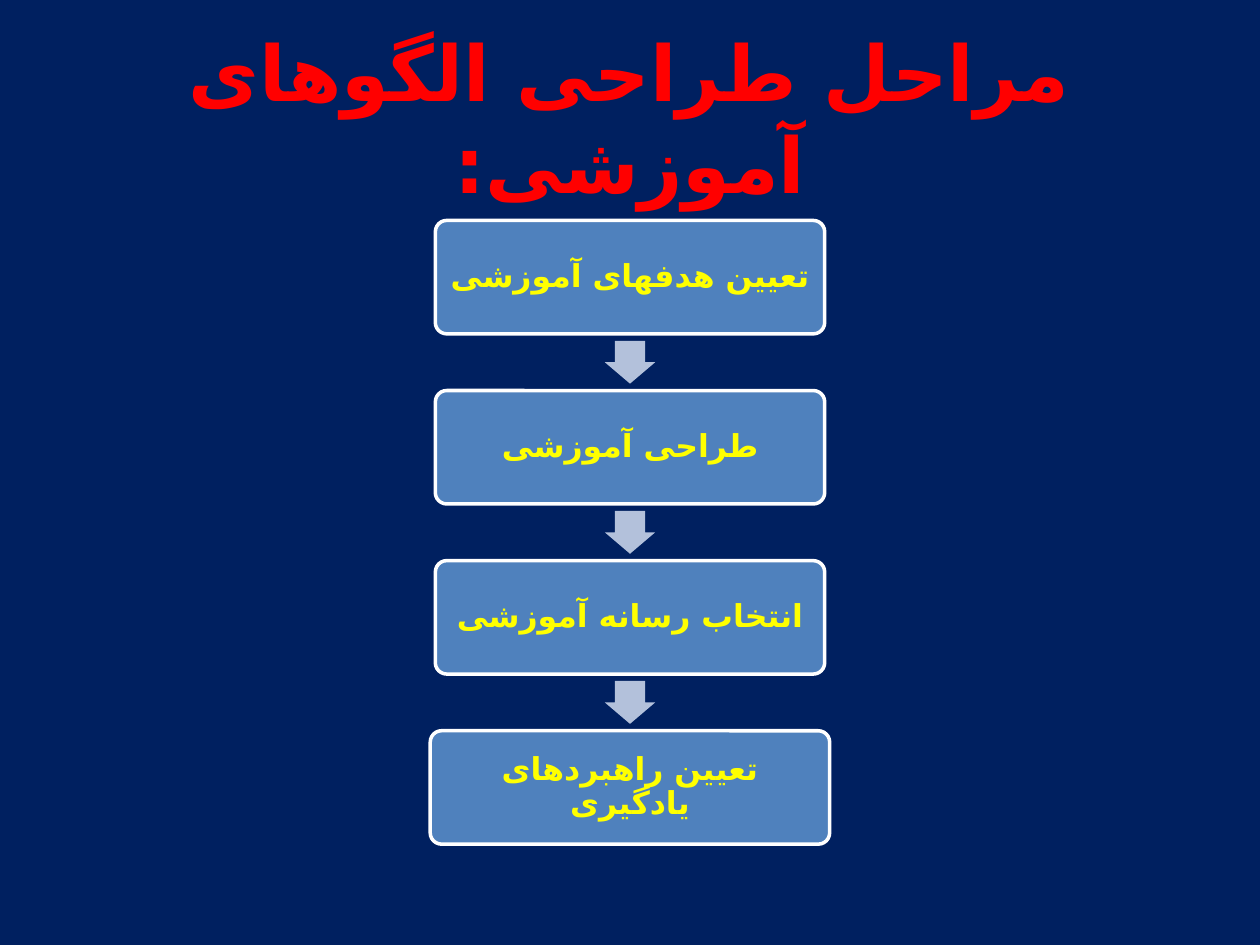
import lxml.etree
from dataclasses import dataclass

import pptx
import pptx.dml.color
import pptx.enum.shapes
import pptx.enum.text
import pptx.oxml.ns
import pptx.util

COLORS = {
    "background": "002060",
    "title": "FF0000",
    "step": "4F81BD",
    "border": "FFFFFF",
    "text": "FFFF00",
    "arrow": "B3C1DB",
}
FONT = "Calibri"
ARABIC_FONT = "DejaVu Sans"
SLIDE_W, SLIDE_H = 10, 7.5
TOP, PITCH = 1.75, 1.35
STEP_H = 0.9
ARROW_W, ARROW_H = 0.34, 0.4


@dataclass
class Step:
    text: str
    width: float = 3.09


STEPS = [
    Step("تعیین هدفهای آموزشی"),
    Step("طراحی آموزشی"),
    Step("انتخاب رسانه آموزشی"),
    Step("تعیین راهبردهای یادگیری", 3.17),
]


def rgb(name: str) -> pptx.dml.color.RGBColor:
    return pptx.dml.color.RGBColor.from_string(COLORS[name])


def centered(width: float, middle: float, height: float) -> list[pptx.util.Length]:
    box = ((SLIDE_W - width) / 2, middle - height / 2, width, height)
    return [pptx.util.Inches(v) for v in box]


def write(sp, text: str, size: float, color: str):
    tf = sp.text_frame
    tf.word_wrap = True
    tf.vertical_anchor = pptx.enum.text.MSO_ANCHOR.MIDDLE
    p = tf.paragraphs[0]
    p.add_run().text = text
    p.alignment = pptx.enum.text.PP_ALIGN.CENTER
    p.font.name = FONT
    p.font.size = pptx.util.Pt(size)
    p.font.bold = True
    p.font.color.rgb = rgb(color)
    props = p._p.get_or_add_pPr().find(pptx.oxml.ns.qn("a:defRPr"))
    cs = lxml.etree.SubElement(props, pptx.oxml.ns.qn("a:cs"))
    cs.set("typeface", ARABIC_FONT)
    return p


def add_title(s, text: str) -> None:
    sp = s.shapes.add_textbox(*centered(0.9 * SLIDE_W, 0.925, SLIDE_H / 6))
    p = write(sp, text, 44, "title")
    p._p.get_or_add_pPr().set("rtl", "1")


def add_step(s, step: Step, row: int) -> None:
    middle = TOP + row * PITCH + STEP_H / 2
    sp = s.shapes.add_shape(
        pptx.enum.shapes.MSO_SHAPE.ROUNDED_RECTANGLE,
        *centered(step.width, middle, STEP_H),
    )
    sp.shadow.inherit = False
    sp.adjustments[0] = 0.1
    sp.fill.solid()
    sp.fill.fore_color.rgb = rgb("step")
    sp.line.color.rgb = rgb("border")
    sp.line.width = pptx.util.Pt(2)
    p = write(sp, step.text, 18, "text")
    p.line_spacing = 0.9
    p.space_after = pptx.util.Pt(6.3)
    tf = sp.text_frame
    tf.margin_left = tf.margin_right = pptx.util.Inches(0.07)
    tf.margin_top = tf.margin_bottom = pptx.util.Inches(0.07)


def add_arrow(s, row: int) -> None:
    middle = TOP + row * PITCH + (STEP_H + PITCH) / 2
    sp = s.shapes.add_shape(
        pptx.enum.shapes.MSO_SHAPE.RIGHT_ARROW,
        *centered(ARROW_W, middle, ARROW_H),
    )
    sp.shadow.inherit = False
    sp.rotation = 90
    sp.adjustments[0] = 0.6
    sp.adjustments[1] = 0.5
    sp.fill.solid()
    sp.fill.fore_color.rgb = rgb("arrow")
    sp.line.fill.background()


def main() -> None:
    prs = pptx.Presentation()
    prs.slide_width = pptx.util.Inches(SLIDE_W)
    prs.slide_height = pptx.util.Inches(SLIDE_H)
    s = prs.slides.add_slide(prs.slide_layouts[6])
    s.background.fill.solid()
    s.background.fill.fore_color.rgb = rgb("background")
    add_title(s, "مراحل طراحی الگوهای آموزشی:")
    for row, step in enumerate(STEPS):
        add_step(s, step, row)
        if row < len(STEPS) - 1:
            add_arrow(s, row)
    prs.save("out.pptx")


if __name__ == "__main__":
    main()
